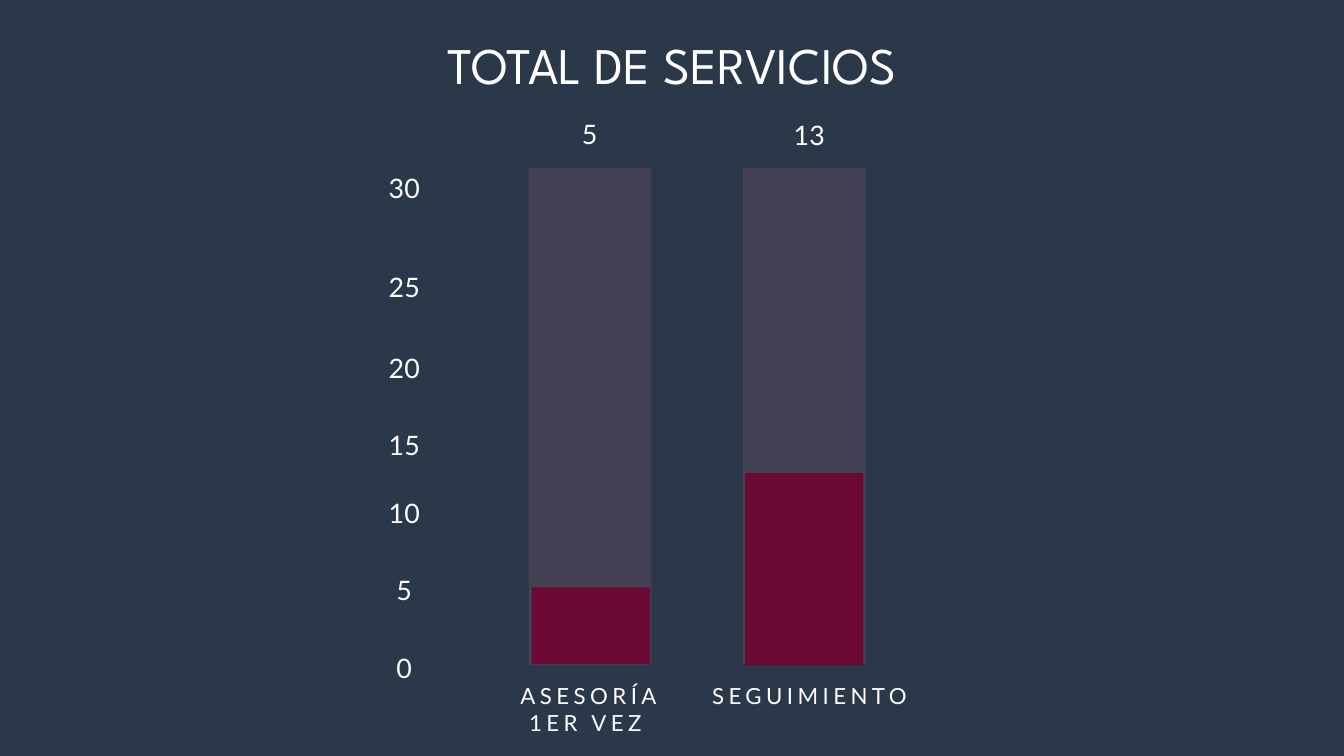
import pptx
import pptx.dml.color
import pptx.enum.shapes
import pptx.enum.text
import pptx.oxml.ns
import pptx.util
from lxml import etree

Inches = pptx.util.Inches
Pt = pptx.util.Pt
RGBColor = pptx.dml.color.RGBColor

NAVY = RGBColor(0x2B, 0x38, 0x49)
WHITE = RGBColor(0xFF, 0xFF, 0xFF)
OFF_WHITE = RGBColor(0xFF, 0xFE, 0xFE)
MAUVE = RGBColor(0x9C, 0x61, 0x7B)
WINE = RGBColor(0x6B, 0x08, 0x34)


def write(box, text, size=28.7, leading=43.9, font="Lato", color=OFF_WHITE, spacing=0.3):
    frame = box.text_frame
    frame.word_wrap = True
    frame.auto_size = pptx.enum.text.MSO_AUTO_SIZE.SHAPE_TO_FIT_TEXT
    frame.vertical_anchor = pptx.enum.text.MSO_ANCHOR.TOP
    frame.margin_left = frame.margin_right = frame.margin_top = frame.margin_bottom = 0
    para = frame.paragraphs[0]
    para.alignment = pptx.enum.text.PP_ALIGN.CENTER
    para.line_spacing = Pt(leading)
    span = para.add_run()
    span.text = text
    span.font.size = Pt(size)
    span.font.name = font
    span.font.color.rgb = color
    span._r.get_or_add_rPr().set("spc", str(round(spacing * 100)))


def add_bar(page, center, top, width, height, color, opacity=100):
    bar = page.shapes.add_shape(
        pptx.enum.shapes.MSO_SHAPE.RECTANGLE,
        Inches(center - width / 2), Inches(top), Inches(width), Inches(height))
    bar.shadow.inherit = False
    bar.line.fill.background()
    bar.fill.solid()
    bar.fill.fore_color.rgb = color
    if opacity < 100:
        tint = bar._element.spPr.find(".//" + pptx.oxml.ns.qn("a:srgbClr"))
        etree.SubElement(tint, pptx.oxml.ns.qn("a:alpha"), val=str(opacity * 1000))


deck = pptx.Presentation()
deck.slide_width = Inches(20)
deck.slide_height = Inches(11.25)
page = deck.slides.add_slide(deck.slide_layouts[5])
page.background.fill.solid()
page.background.fill.fore_color.rgb = NAVY

# Title
title = page.shapes.title
title.left, title.top = Inches(2.49), Inches(0.34)
title.width, title.height = Inches(15.02), Inches(1.01)
write(title, "TOTAL DE SERVICIOS", size=55, leading=77,
      font="League Spartan", color=WHITE, spacing=0)

# Scale, unevenly spaced
scale = [(30, 2.43), (25, 3.89), (20, 5.1), (15, 6.25), (10, 7.26), (5, 8.41), (0, 9.57)]
for number, top in scale:
    box = page.shapes.add_textbox(Inches(5.53), Inches(top), Inches(0.97), Inches(0.54))
    write(box, str(number))

# Bars: name, name left, name width, name height, value, value left, value top,
# track center, filled center, filled top, filled height
services = [
    ("ASESORÍA 1ER VEZ ", 7.54, 2.49, 0.78, 5, 8.29, 1.62, 8.78, 8.79, 8.74, 1.14),
    ("SEGUIMIENTO", 10.21, 3.67, 0.39, 13, 11.56, 1.63, 11.97, 11.97, 7.04, 2.86),
]
for (name, name_left, name_width, name_height, value, value_left, value_top,
     track_center, filled_center, filled_top, filled_height) in services:
    box = page.shapes.add_textbox(
        Inches(name_left), Inches(10.15), Inches(name_width), Inches(name_height))
    write(box, name, size=23.8, leading=29, spacing=4.8)
    add_bar(page, track_center, 2.5, 1.82, 7.39, MAUVE, opacity=23)
    add_bar(page, filled_center, filled_top, 1.76, filled_height, WINE)
    box = page.shapes.add_textbox(
        Inches(value_left), Inches(value_top), Inches(0.97), Inches(0.56))
    write(box, str(value))

deck.save("out.pptx")
